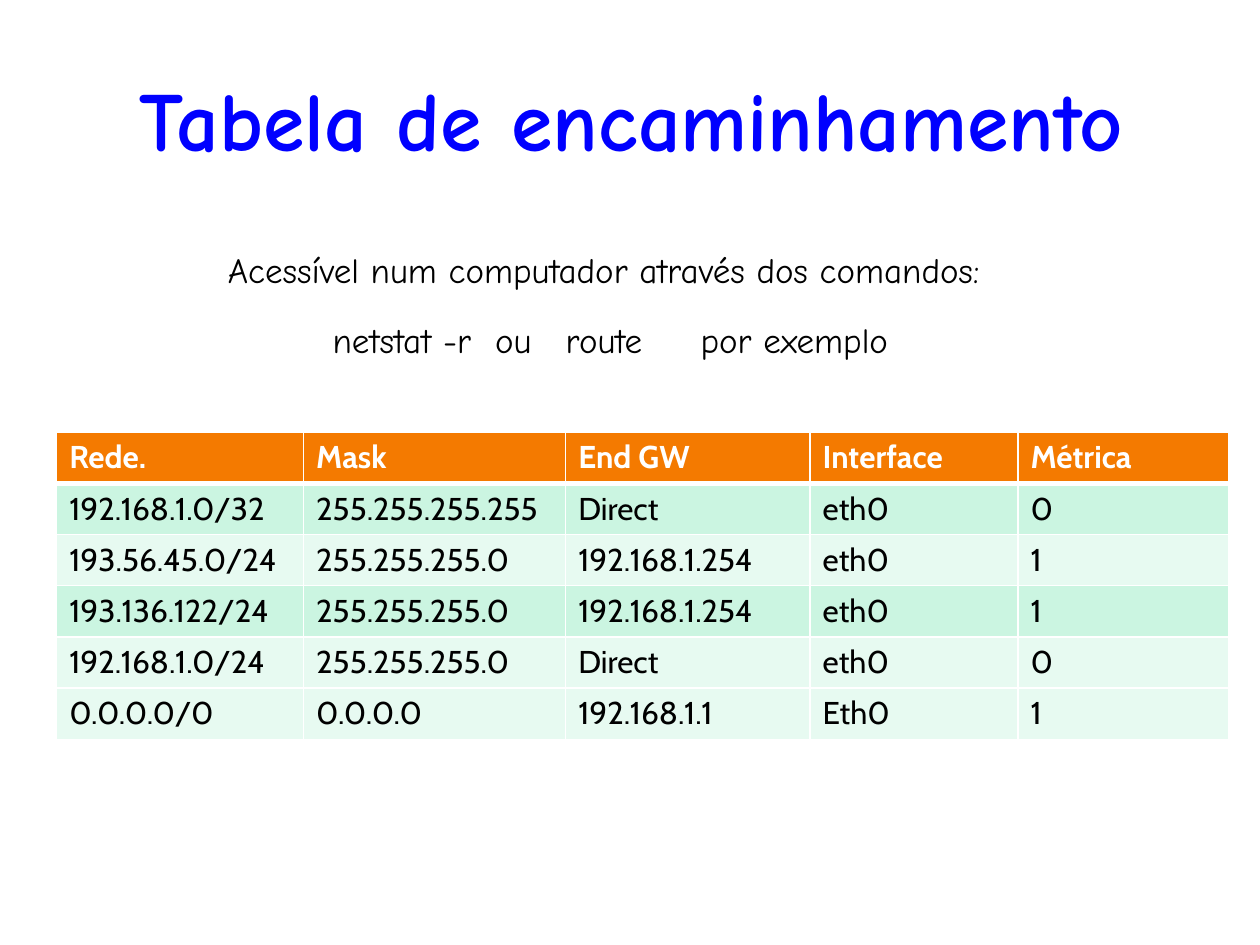
from lxml.etree import SubElement
from pptx import Presentation
from pptx.dml.color import RGBColor
from pptx.enum.text import MSO_ANCHOR, PP_ALIGN
from pptx.oxml.ns import qn
from pptx.util import Inches, Pt

COLORS = {"title": "0000FF", "text": "000000", "white": "FFFFFF",
          "header": "F47A00", "band": "CBF5E1", "light": "E7FAF1"}
ROUTES = [
    ("Rede.", "Mask", "End GW", "Interface", "Métrica"),
    ("192.168.1.0/32", "255.255.255.255", "Direct", "eth0", "0"),
    ("193.56.45.0/24", "255.255.255.0", "192.168.1.254", "eth0", "1"),
    ("193.136.122/24", "255.255.255.0", "192.168.1.254", "eth0", "1"),
    ("192.168.1.0/24", "255.255.255.0", "Direct", "eth0", "0"),
    ("0.0.0.0/0", "0.0.0.0", "192.168.1.1", "Eth0", "1"),
]
ROW_FILLS = ["header", "band", "light", "band", "light", "light"]
COL_WIDTHS = [1.96, 2.08, 1.94, 1.65, 1.67]
COMMAND_TABS = [1.43, 2.72, 3.28, 4.35]


def rgb(name):
    return RGBColor.from_string(COLORS[name])


def style_text(p, font, size, color, bold=False):
    for r in p.runs:
        r.font.name = font
        r.font.size = Pt(size)
        r.font.bold = bold
        r.font.color.rgb = rgb(color)


def add_text_frame(s, box):
    tf = s.shapes.add_textbox(*map(Inches, box)).text_frame
    tf.word_wrap = True
    return tf


def add_title(s, box):
    tf = add_text_frame(s, box)
    tf.vertical_anchor = MSO_ANCHOR.MIDDLE
    p = tf.paragraphs[0]
    p.text = "Tabela de encaminhamento"
    p.alignment = PP_ALIGN.CENTER
    style_text(p, "Comic Neue", 48, "title", True)


def set_tabs(p, positions):
    tabs = SubElement(p._p.get_or_add_pPr(), qn("a:tabLst"))
    for x in positions:
        SubElement(tabs, qn("a:tab"), pos=str(Inches(x)), algn="l")


def add_commands(s, box):
    tf = add_text_frame(s, box)
    tf.margin_left = tf.margin_right = Inches(0.07)
    tf.margin_top = tf.margin_bottom = Inches(0.03)
    intro, commands = tf.paragraphs[0], tf.add_paragraph()
    intro.text = "Acessível num computador através dos comandos: "
    intro.alignment = PP_ALIGN.CENTER
    commands.text = "\tnetstat -r\tou\troute\tpor exemplo"
    commands.alignment = PP_ALIGN.LEFT
    commands.space_before = Pt(20)
    for p in (intro, commands):
        p.line_spacing = 0.85
        style_text(p, "Comic Neue", 20, "text")
    set_tabs(commands, COMMAND_TABS)


def set_borders(cell, top, bottom):
    tc_pr = cell._tc.get_or_add_tcPr()
    for side, width in (("L", 1), ("R", 1), ("T", top), ("B", bottom)):
        ln = SubElement(tc_pr, qn(f"a:ln{side}"), w=str(Pt(width)))
        fill = SubElement(ln, qn("a:solidFill"))
        SubElement(fill, qn("a:srgbClr"), val=COLORS["white"])


def add_routing_table(s, box):
    table = s.shapes.add_table(len(ROUTES), len(COL_WIDTHS), *map(Inches, box)).table
    for col, width in zip(table.columns, COL_WIDTHS):
        col.width = Inches(width)
    for i, (values, fill) in enumerate(zip(ROUTES, ROW_FILLS)):
        header = i == 0
        for j, value in enumerate(values):
            cell = table.cell(i, j)
            cell.text = value
            style_text(cell.text_frame.paragraphs[0], "Cabin", 18,
                       "white" if header else "text", header)
            set_borders(cell, 3 if i == 1 else 1, 3 if header else 1)
            cell.fill.solid()
            cell.fill.fore_color.rgb = rgb(fill)


def main():
    prs = Presentation()
    prs.slide_width, prs.slide_height = Inches(10), Inches(7.5)
    s = prs.slides.add_slide(prs.slide_layouts[6])
    add_title(s, (0.59, 0.44, 8.84, 1))
    add_commands(s, (1.14, 1.99, 7.4, 0.92))
    add_routing_table(s, (0.45, 3.43, 9.3, 2.44))
    prs.save("out.pptx")


if __name__ == "__main__":
    main()
